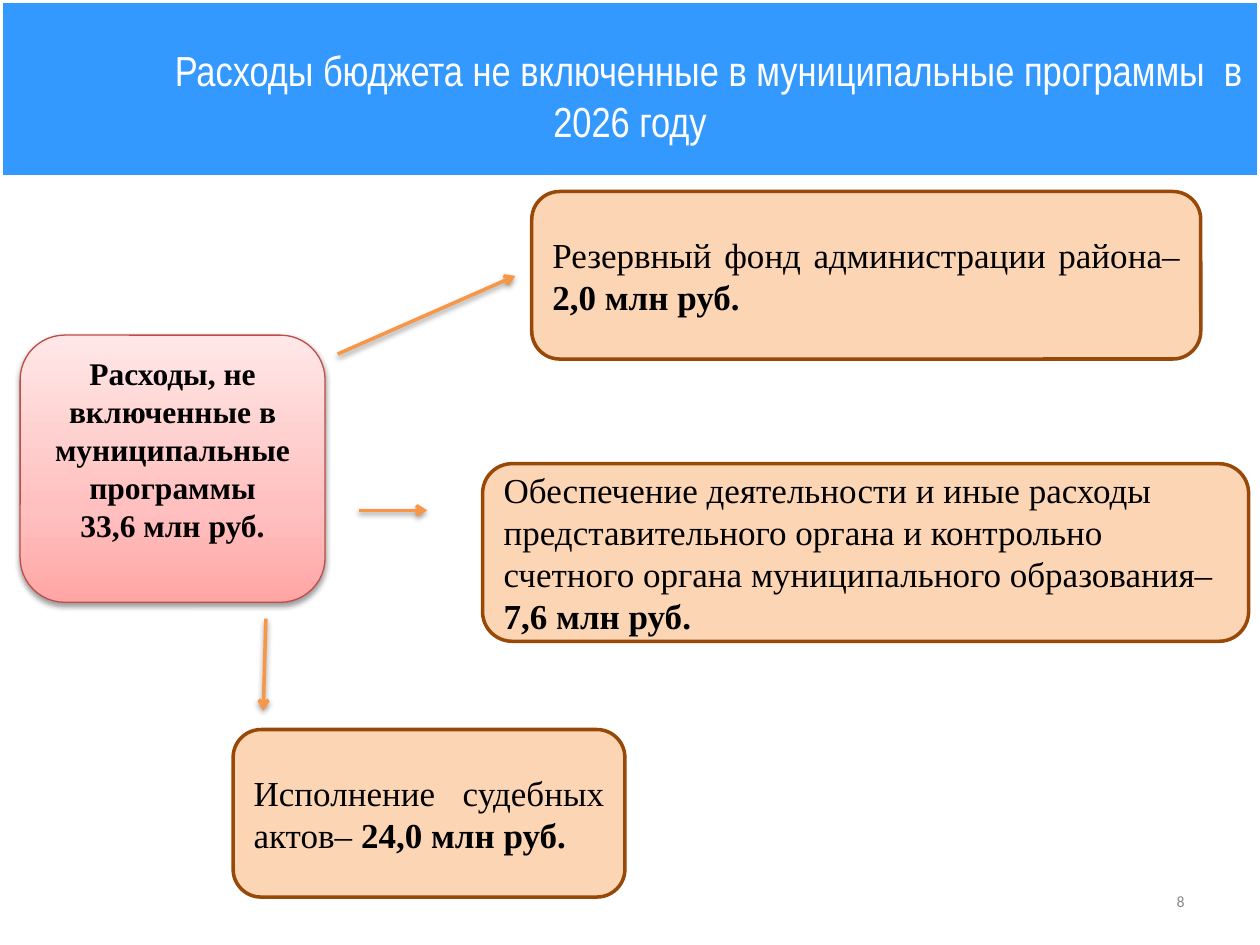
from pptx import Presentation
from pptx.dml.color import RGBColor
from pptx.enum.shapes import MSO_CONNECTOR, MSO_SHAPE
from pptx.enum.text import MSO_ANCHOR, PP_ALIGN
from pptx.oxml import parse_xml
from pptx.oxml.ns import nsdecls
from pptx.util import Inches, Pt

RECTANGLE, ROUNDED = MSO_SHAPE.RECTANGLE, MSO_SHAPE.ROUNDED_RECTANGLE
STRAIGHT = MSO_CONNECTOR.STRAIGHT
TOP, MIDDLE = MSO_ANCHOR.TOP, MSO_ANCHOR.MIDDLE
LEFT, CENTER, RIGHT, JUSTIFY = (
    PP_ALIGN.LEFT, PP_ALIGN.CENTER, PP_ALIGN.RIGHT, PP_ALIGN.JUSTIFY)

BLUE = RGBColor(0x33, 0x99, 0xFF)
WHITE = RGBColor(0xFF, 0xFF, 0xFF)
BLACK = RGBColor(0, 0, 0)
PEACH = RGBColor(0xFC, 0xD5, 0xB5)
BROWN = RGBColor(0x98, 0x48, 0x07)
RED = RGBColor(0xBF, 0x4C, 0x48)
ORANGE = RGBColor(0xF7, 0x96, 0x46)
GRAY = RGBColor(0x89, 0x89, 0x89)
PINK_STOPS = [
    (0, RGBColor(0xFF, 0xA6, 0xA5)),
    (35, RGBColor(0xFF, 0xC0, 0xBF)),
    (100, RGBColor(0xFF, 0xE7, 0xE7)),
]
SERIF = "Times New Roman"

# Expense items: box, alignment, description, amount
ITEMS = [
    ((4.22, 1.52, 5.31, 1.33), JUSTIFY,
     "Резервный фонд администрации района– ", "2,0 млн руб."),
    ((3.83, 3.68, 6.08, 1.41), LEFT,
     "Обеспечение деятельности и иные расходы  представительного органа "
     "и контрольно счетного органа муниципального образования– ", "7,6 млн руб."),
    ((1.85, 5.79, 3.11, 1.33), JUSTIFY,
     "Исполнение судебных актов– ", "24,0 млн руб."),
]
ARROWS = [
    (2.68, 2.81, 4.09, 2.19),
    (2.85, 4.05, 3.39, 4.05),
    (2.11, 4.91, 2.09, 5.64),
]


def add_box(slide, kind, box, line_color, line_width, anchor):
    shape = slide.shapes.add_shape(kind, *map(Inches, box))
    shape.line.color.rgb = line_color
    shape.line.width = Pt(line_width)
    shape.text_frame.word_wrap = True
    shape.text_frame.vertical_anchor = anchor
    return shape


def add_run(paragraph, text, font_name, size, color, bold=False):
    run = paragraph.add_run()
    run.text = text
    run.font.name = font_name
    run.font.size = Pt(size)
    run.font.color.rgb = color
    run.font.bold = bold


def add_shadow(shape):
    shape._element.spPr.append(parse_xml(
        f'<a:effectLst {nsdecls("a")}>'
        '<a:outerShdw blurRad="40000" dist="20000" dir="5400000" rotWithShape="0">'
        '<a:srgbClr val="000000"><a:alpha val="38000"/></a:srgbClr>'
        '</a:outerShdw></a:effectLst>'))


def add_title(slide, box):
    shape = add_box(slide, RECTANGLE, box, WHITE, 3, MIDDLE)
    shape.shadow.inherit = False
    shape.fill.solid()
    shape.fill.fore_color.rgb = BLUE
    shape.text_frame.margin_top = Inches(0.15)
    paragraph = shape.text_frame.paragraphs[0]
    paragraph.alignment = CENTER
    paragraph.line_spacing = Pt(29)
    paragraph._p.get_or_add_pPr().set("indent", str(Inches(1.25)))
    add_run(paragraph,
            "Расходы бюджета не включенные в муниципальные программы  в 2026 году",
            "Arial Narrow", 24, WHITE)


def add_total(slide, box):
    shape = add_box(slide, ROUNDED, box, RED, 0.75, TOP)
    # Three-stop vertical gradient
    stops = "".join(
        f'<a:gs pos="{position * 1000}"><a:srgbClr val="{color}"/></a:gs>'
        for position, color in PINK_STOPS)
    shape._element.spPr.find("{*}prstGeom").addnext(parse_xml(
        f'<a:gradFill {nsdecls("a")} rotWithShape="1"><a:gsLst>{stops}</a:gsLst>'
        '<a:lin ang="16200000" scaled="0"/></a:gradFill>'))
    add_shadow(shape)
    frame = shape.text_frame
    for paragraph, text in (
            (frame.paragraphs[0], "Расходы, не включенные в муниципальные программы"),
            (frame.add_paragraph(), "33,6 млн руб.")):
        paragraph.alignment = CENTER
        add_run(paragraph, text, SERIF, 18, BLACK, bold=True)


def add_item(slide, box, alignment, description, amount):
    shape = add_box(slide, ROUNDED, box, BROWN, 2, MIDDLE)
    shape.shadow.inherit = False
    shape.fill.solid()
    shape.fill.fore_color.rgb = PEACH
    paragraph = shape.text_frame.paragraphs[0]
    paragraph.alignment = alignment
    add_run(paragraph, description, SERIF, 20, BLACK)
    add_run(paragraph, amount, SERIF, 20, BLACK, bold=True)


def add_arrow(slide, ends):
    connector = slide.shapes.add_connector(STRAIGHT, *map(Inches, ends))
    connector.line.color.rgb = ORANGE
    connector.line.width = Pt(2)
    connector.line._get_or_add_ln().append(
        parse_xml(f'<a:tailEnd {nsdecls("a")} type="arrow"/>'))
    add_shadow(connector)


def add_page_number(slide, box):
    frame = slide.shapes.add_textbox(*map(Inches, box)).text_frame
    frame.word_wrap = True
    frame.vertical_anchor = MIDDLE
    paragraph = frame.paragraphs[0]
    paragraph.alignment = RIGHT
    add_run(paragraph, "8", "Calibri", 9, GRAY)


def main():
    presentation = Presentation()
    presentation.slide_width = Inches(10)
    presentation.slide_height = Inches(7.5)
    slide = presentation.slides.add_slide(presentation.slide_layouts[6])
    add_title(slide, (0, 0, 10, 1.41))
    add_total(slide, (0.16, 2.66, 2.42, 2.12))
    for item in ITEMS:
        add_item(slide, *item)
    for ends in ARROWS:
        add_arrow(slide, ends)
    add_page_number(slide, (7.17, 6.95, 2.33, 0.4))
    presentation.save("out.pptx")


if __name__ == "__main__":
    main()
